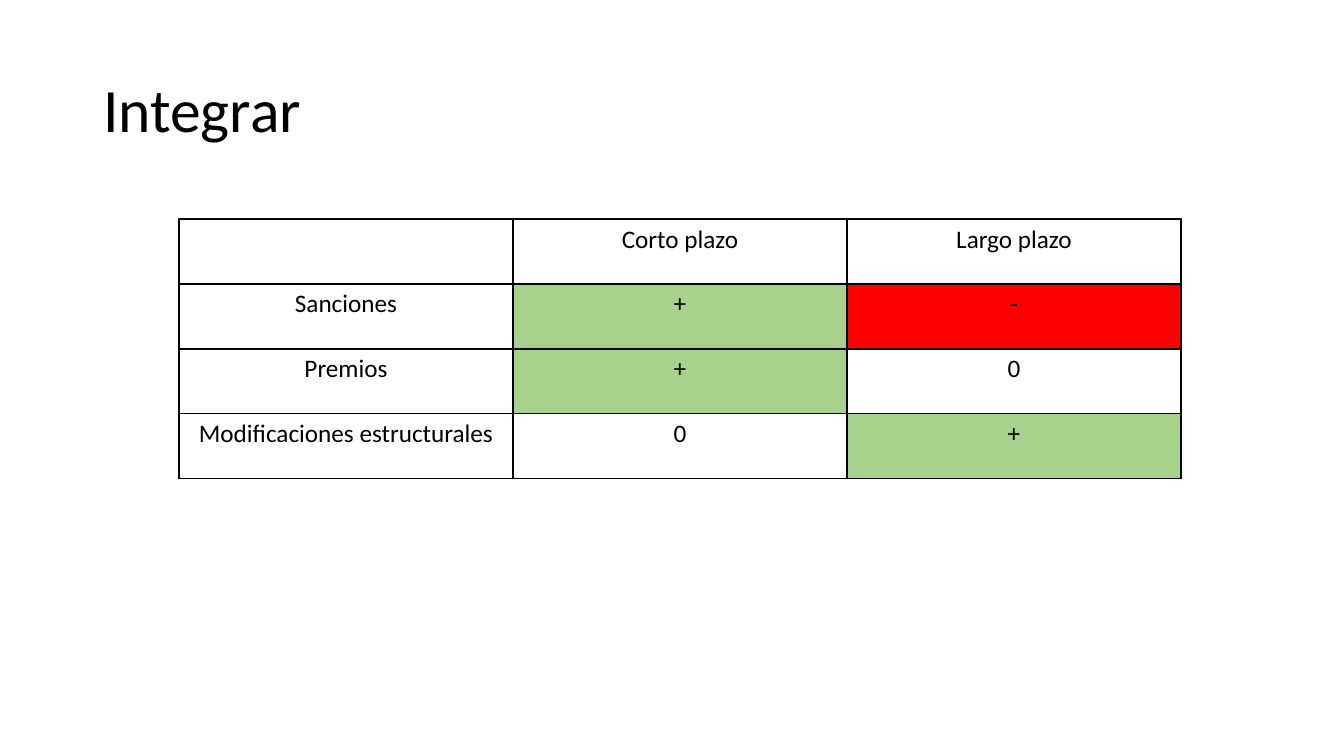
from lxml import etree
from pptx import Presentation
from pptx import util as u
from pptx.dml.color import RGBColor
from pptx.enum import text
from pptx.oxml.ns import qn

PX = 914400 / 100.8
theme = {
    "font": "Calibri",
    "ink": "000000",
    "good": "A9D18E",
    "bad": "FF0000",
    "title": 44,
    "cell": 18,
    "rule": 1,
}


def px(n):
    return u.Emu(round(n * PX))


def write(para, words, size):
    run = para.add_run()
    run.text = words
    run.font.name = theme["font"]
    run.font.size = u.Pt(size)
    run.font.color.rgb = RGBColor.from_string(theme["ink"])


deck = Presentation()
deck.slide_width, deck.slide_height = px(1344), px(756)
slide = deck.slides.add_slide(deck.slide_layouts[5])

title = slide.shapes.title
title.left, title.top, title.width, title.height = px(93), px(40), px(1159), px(146)
title.text_frame.vertical_anchor = text.MSO_ANCHOR.MIDDLE
head = title.text_frame.paragraphs[0]
head.alignment = text.PP_ALIGN.LEFT
head.line_spacing = 0.9
write(head, "Integrar", theme["title"])

rows = [
    ["", "Corto plazo", "Largo plazo"],
    ["Sanciones", "+", "-"],
    ["Premios", "+", "0"],
    ["Modificaciones estructurales", "0", "+"],
]
fills = {"+": theme["good"], "-": theme["bad"]}

frame = slide.shapes.add_table(4, 3, px(179), px(219), px(334 * 3), px(65 * 4))
table = frame.table
table.first_row = False
table.horz_banding = False
for col in table.columns:
    col.width = px(334)
for row in table.rows:
    row.height = px(65)

for r, row in enumerate(rows):
    for c, words in enumerate(row):
        cell = table.cell(r, c)
        props = cell._tc.get_or_add_tcPr()
        for side in ("a:lnL", "a:lnR", "a:lnT", "a:lnB"):
            line = etree.SubElement(props, qn(side), w=str(u.Pt(theme["rule"])))
            solid = etree.SubElement(line, qn("a:solidFill"))
            etree.SubElement(solid, qn("a:srgbClr"), val=theme["ink"])
        if words in fills:
            cell.fill.solid()
            cell.fill.fore_color.rgb = RGBColor.from_string(fills[words])
        else:
            cell.fill.background()
        if words:
            para = cell.text_frame.paragraphs[0]
            para.alignment = text.PP_ALIGN.CENTER
            write(para, words, theme["cell"])

deck.save("out.pptx")
